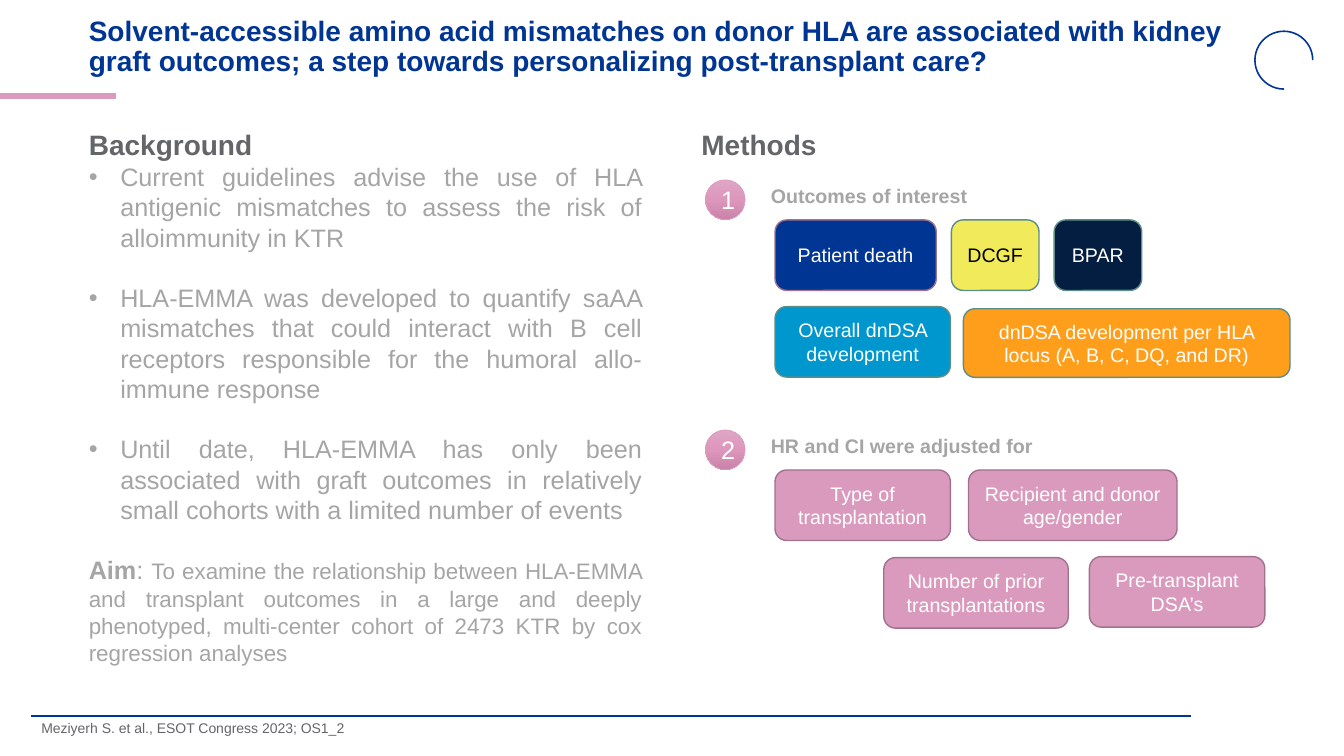
from copy import deepcopy
from pptx import Presentation
from pptx.dml.color import RGBColor
from pptx.enum.shapes import MSO_CONNECTOR, MSO_SHAPE
from pptx.enum.text import MSO_ANCHOR, MSO_AUTO_SIZE, PP_ALIGN
from pptx.oxml.ns import qn
from pptx.util import Pt

NAVY, PINK, MAUVE, TEAL = "003594", "DA9ABD", "A1728C", "5C8D87"
DARK, GREY, WHITE, BLACK = "636569", "A5A5A5", "FFFFFF", "000000"
BADGE_STOPS = [(0, "DFA6C5"), (0.5, "DD97BD"), (1, "C982A9")]

BULLETS = [
    "Current guidelines advise the use of HLA antigenic mismatches to assess the risk of alloimmunity in KTR",
    "HLA-EMMA was developed to quantify saAA mismatches that could interact with B cell receptors "
    "responsible for the humoral allo-immune response",
    "Until date, HLA-EMMA has only been associated with graft outcomes in relatively small cohorts "
    "with a limited number of events",
]
AIM = ("To examine the relationship between HLA-EMMA and transplant outcomes in a large and deeply "
       "phenotyped, multi-center cohort of 2473 KTR by cox regression analyses")

OUTCOMES = [
    ("Patient death", 49.7, 0, 115.2, 50.4, NAVY, MAUVE, WHITE),
    ("DCGF", 175.7, 0, 62.6, 50.4, "F1EB5B", TEAL, BLACK),
    ("BPAR", 249.1, 0, 62.6, 50.4, "041E42", TEAL, WHITE),
    ("Overall dnDSA development", 49.7, 61.9, 125.3, 50.4, "0097CE", TEAL, WHITE),
    ("dnDSA development per HLA locus (A, B, C, DQ, and DR)", 184.3, 63.4, 233.3, 49, "FF9E1B", TEAL, WHITE),
]
COVARIATES = [
    (text, left, top, width, 50.4, PINK, MAUVE, WHITE)
    for text, left, top, width in [
        ("Type of transplantation", 49.7, 0, 125.3),
        ("Recipient and donor age/gender", 187.9, 0, 149),
        ("Number of prior transplantations", 127.4, 62.6, 131.8),
        ("Pre-transplant DSA’s", 274.3, 61.9, 125.3),
    ]
]


def color(value):
    return RGBColor.from_string(value)


def set_font(font, size, value, bold=False):
    font.name = "Arial"
    font.size = Pt(size)
    font.bold = bold
    font.color.rgb = color(value)


def place(shape, left, top, width, height):
    shape.left, shape.top, shape.width, shape.height = Pt(left), Pt(top), Pt(width), Pt(height)
    shape.text_frame.word_wrap = True
    shape.text_frame.auto_size = MSO_AUTO_SIZE.NONE


def format_para(para, align=PP_ALIGN.LEFT, bullet=False, before=0, spacing=1.0):
    props = para._p.get_or_add_pPr()
    indent = Pt(22.5) if bullet else 0
    props.set("marL", str(indent))
    props.set("indent", str(-indent))
    mark = props.makeelement(qn("a:buChar" if bullet else "a:buNone"), {"char": "•"} if bullet else {})
    props.append(mark)
    para.alignment = align
    para.space_before = Pt(before)
    para.line_spacing = spacing


def add_panel(page, kind, left, top, width, height, line, line_width):
    shape = page.shapes.add_shape(kind, Pt(left), Pt(top), Pt(width), Pt(height))
    shape.shadow.inherit = False
    shape.line.color.rgb = color(line)
    shape.line.width = Pt(line_width)
    return shape


def write_centered(shape, text, size, value):
    shape.text_frame.vertical_anchor = MSO_ANCHOR.MIDDLE
    para = shape.text_frame.paragraphs[0]
    para.text = text
    para.alignment = PP_ALIGN.CENTER
    set_font(para.font, size, value)


def add_label(page, left, top, width, height, text, size, value):
    box = page.shapes.add_textbox(0, 0, 0, 0)
    place(box, left, top, width, height)
    para = box.text_frame.paragraphs[0]
    para.text = text
    set_font(para.font, size, value, True)


def add_rule(page, left, right, top, value, width):
    rule = page.shapes.add_connector(MSO_CONNECTOR.STRAIGHT, Pt(left), Pt(top), Pt(right), Pt(top))
    rule.line.color.rgb = color(value)
    rule.line.width = Pt(width)
    properties = rule._element.spPr
    properties.append(properties.makeelement(qn("a:effectLst"), {}))


def add_decoration(page):
    add_rule(page, 0, 82.8, 68.4, PINK, 4.5)
    add_rule(page, 22.3, 851, 511.2, NAVY, 1.5)
    ring = add_panel(page, MSO_SHAPE.ARC, 896.4, 22.3, 41.3, 41.3, NAVY, 1.13)
    ring.fill.background()
    ring.adjustments[0] = 54
    ring.adjustments[1] = 0


def fill_title(title, left, top, width, height):
    place(title, left, top, width, height)
    title.text_frame.vertical_anchor = MSO_ANCHOR.MIDDLE
    para = title.text_frame.paragraphs[0]
    para.text = ("Solvent-accessible amino acid mismatches on donor HLA are associated with kidney "
                 "graft outcomes; a step towards personalizing post-transplant care?")
    para.alignment = PP_ALIGN.LEFT
    para.line_spacing = 0.9
    set_font(para.font, 20, NAVY, True)


def fill_citation(body, left, top, width, height):
    place(body, left, top, width, height)
    para = body.text_frame.paragraphs[0]
    para.text = "Meziyerh S. et al., ESOT Congress 2023; OS1_2"
    format_para(para, spacing=0.9)
    set_font(para.font, 10, DARK)


def fill_background(body, left, top, width, height):
    place(body, left, top, width, height)
    frame = body.text_frame
    heading = frame.paragraphs[0]
    heading.text = "Background"
    format_para(heading)
    set_font(heading.font, 20, DARK, True)
    for index, text in enumerate(BULLETS):
        para = frame.add_paragraph()
        para.text = text
        format_para(para, PP_ALIGN.JUSTIFY, True, 21.6 if index else 0)
        set_font(para.font, 18, GREY)
    aim = frame.add_paragraph()
    format_para(aim, PP_ALIGN.JUSTIFY, before=21.6)
    for text, size, bold in [("Aim", 18, True), (": ", 18, False), (AIM, 16, False)]:
        span = aim.add_run()
        span.text = text
        set_font(span.font, size, GREY, bold)


def add_badge(page, left, top, number):
    badge = add_panel(page, MSO_SHAPE.OVAL, left, top, 28.4, 28.4, PINK, 0.5)
    badge.fill.gradient()
    badge.fill.gradient_angle = 270
    stop_list = badge._element.spPr.find(qn("a:gradFill")).find(qn("a:gsLst"))
    stop_list.append(deepcopy(stop_list[0]))
    for stop, (position, value) in zip(badge.fill.gradient_stops, BADGE_STOPS):
        stop.position = position
        stop.color.rgb = color(value)
    write_centered(badge, number, 18, WHITE)


def add_method_step(page, left, top, number, label, chips):
    for text, across, down, width, height, fill, line, ink in chips:
        chip = add_panel(page, MSO_SHAPE.FLOWCHART_ALTERNATE_PROCESS,
                         left + across, top + 28.6 + down, width, height, line, 1)
        chip.fill.solid()
        chip.fill.fore_color.rgb = color(fill)
        write_centered(chip, text, 14, ink)
    add_label(page, left + 39.6, top - 0.7, 219.6, 24.5, label, 14, GREY)
    add_badge(page, left, top, number)


def add_methods(page, left, top):
    add_label(page, left, top, 129.6, 31.7, "Methods", 20, DARK)
    add_method_step(page, left + 10, top + 40.7, "1", "Outcomes of interest", OUTCOMES)
    add_method_step(page, left + 10, top + 219.3, "2", "HR and CI were adjusted for", COVARIATES)


def main():
    deck = Presentation()
    deck.slide_width, deck.slide_height = Pt(960), Pt(540)
    page = deck.slides.add_slide(deck.slide_layouts[3])
    add_decoration(page)
    fill_title(page.shapes.title, 56.2, 9.4, 828, 49)
    fill_background(page.placeholders[1], 56.2, 87.8, 409.7, 395.3)
    fill_citation(page.placeholders[2], 22.3, 511.9, 564.5, 24.5)
    add_methods(page, 493.9, 87.8)
    deck.save("out.pptx")


if __name__ == "__main__":
    main()
